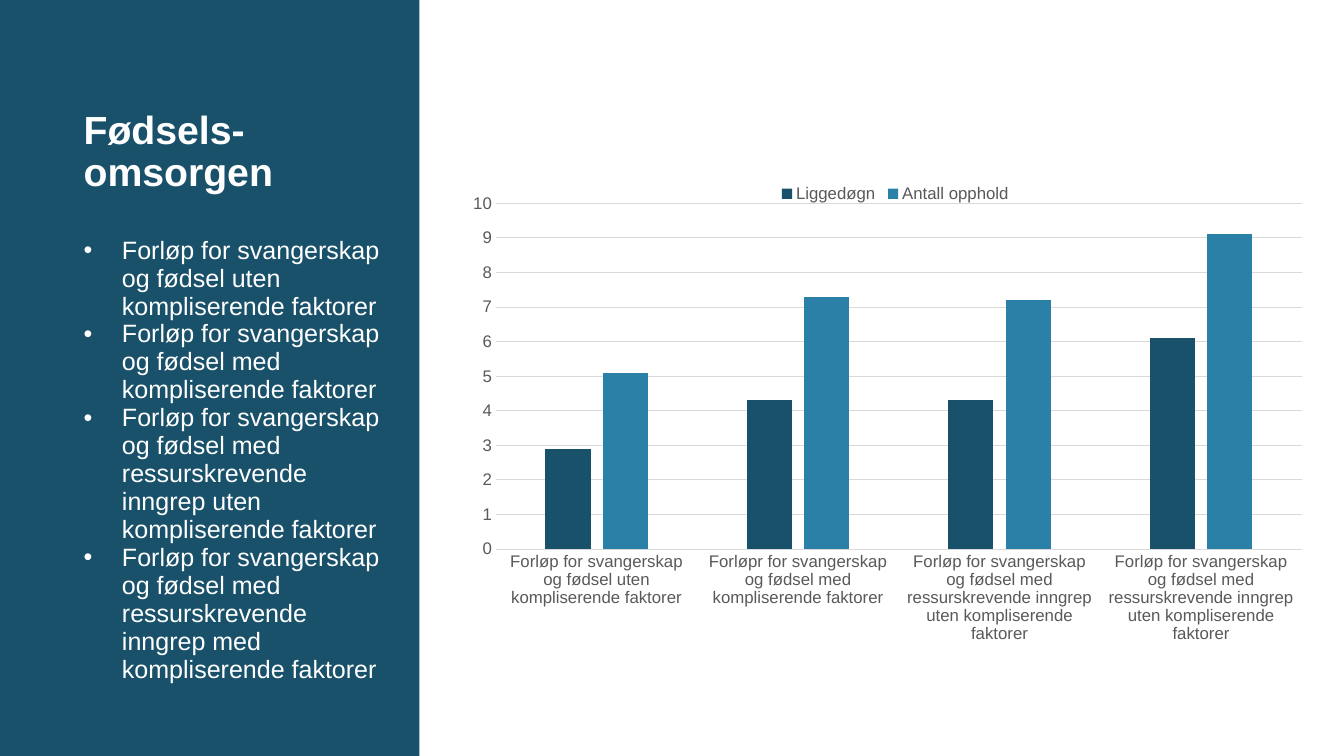
from lxml import etree
from pptx import Presentation
from pptx.chart.data import CategoryChartData
from pptx.dml.color import RGBColor
from pptx.enum import chart as ch, shapes, text
from pptx.oxml import ns
from pptx.util import Inches, Pt

TITLE = "Fødsels-omsorgen"
BULLETS = [
    "Forløp for svangerskap og fødsel uten kompliserende faktorer",
    "Forløp for svangerskap og fødsel med kompliserende faktorer",
    "Forløp for svangerskap og fødsel med ressurskrevende inngrep uten kompliserende faktorer",
    "Forløp for svangerskap og fødsel med ressurskrevende inngrep med kompliserende faktorer",
]
CATEGORIES = [
    "Forløp for svangerskap og fødsel uten kompliserende faktorer",
    "Forløpr for svangerskap og fødsel med kompliserende faktorer",
    "Forløp for svangerskap og fødsel med ressurskrevende inngrep uten kompliserende faktorer",
    "Forløp for svangerskap og fødsel med ressurskrevende inngrep uten kompliserende faktorer",
]
SERIES = [
    ("Liggedøgn", (2.9, 4.3, 4.3, 6.1), "navy"),
    ("Antall opphold", (5.1, 7.3, 7.2, 9.1), "blue"),
]
COLORS = {"navy": "19516A", "blue": "2A80A6", "white": "FFFFFF",
          "label": "595959", "grid": "D9D9D9"}
FONT = "Arial"
PLOT_LAYOUT = {"x": 0.056, "y": 0.099, "w": 0.936, "h": 0.682}
LEGEND_LAYOUT = {"x": 0.38, "y": 0.05, "w": 0.28, "h": 0.06}


def rgb(name):
    return RGBColor.from_string(COLORS[name])


def style_font(font, size, color, bold=False):
    font.name, font.size, font.bold = FONT, Pt(size), bold
    font.color.rgb = rgb(color)


def add_text(slide, box, paragraphs, size, anchor, spacing, bold=False):
    tf = slide.shapes.add_textbox(*map(Inches, box)).text_frame
    tf.word_wrap = True
    tf.vertical_anchor = anchor
    tf.margin_left = tf.margin_right = tf.margin_top = tf.margin_bottom = 0
    tf.text = "\n".join(paragraphs)
    for p in tf.paragraphs:
        p.line_spacing = spacing
        style_font(p.runs[0].font, size, "white", bold)
    return tf


def add_bullets(tf, indent):
    for p in tf.paragraphs:
        props = p._p.get_or_add_pPr()
        props.set("marL", str(Inches(indent)))
        props.set("indent", str(-Inches(indent)))
        etree.SubElement(props, ns.qn("a:buFont")).set("typeface", FONT)
        etree.SubElement(props, ns.qn("a:buChar")).set("char", "•")


def set_layout(parent, after, fractions, inner=False):
    for old in parent.findall(ns.qn("c:layout")):
        parent.remove(old)
    layout = etree.Element(ns.qn("c:layout"))
    manual = etree.SubElement(layout, ns.qn("c:manualLayout"))
    settings = [("layoutTarget", "inner")] if inner else []
    settings += [("xMode", "edge"), ("yMode", "edge"), *fractions.items()]
    for tag, value in settings:
        etree.SubElement(manual, ns.qn("c:" + tag)).set("val", str(value))
    if after is None:
        parent.insert(0, layout)
    else:
        after.addnext(layout)


def add_stay_chart(slide):
    data = CategoryChartData()
    data.categories = CATEGORIES
    for name, values, _ in SERIES:
        data.add_series(name, values)
    box = map(Inches, (4.44, 1.52, 8.54, 5.03))
    chart = slide.shapes.add_chart(ch.XL_CHART_TYPE.COLUMN_CLUSTERED, *box, data).chart
    chart.has_title = False
    chart.font.name, chart.font.size = FONT, Pt(10)

    plot = chart.plots[0]
    plot.vary_by_categories = False
    plot.gap_width, plot.overlap = 219, -27
    for series, (_, _, color) in zip(plot.series, SERIES):
        series.format.fill.solid()
        series.format.fill.fore_color.rgb = rgb(color)

    for axis in (chart.category_axis, chart.value_axis):
        axis.major_tick_mark = axis.minor_tick_mark = ch.XL_TICK_MARK.NONE
        style_font(axis.tick_labels.font, 12, "label")
    values = chart.value_axis
    values.minimum_scale, values.maximum_scale, values.major_unit = 0, 10, 1
    values.tick_labels.number_format = "0"
    values.tick_labels.number_format_is_linked = False
    values.format.line.fill.background()
    for part in (chart.category_axis, values.major_gridlines):
        part.format.line.color.rgb = rgb("grid")
        part.format.line.width = Pt(0.75)

    chart.has_legend = True
    legend = chart.legend
    legend.position = ch.XL_LEGEND_POSITION.BOTTOM
    legend.include_in_layout = False
    style_font(legend.font, 12, "label")
    area = chart._chartSpace.find(".//" + ns.qn("c:plotArea"))
    set_layout(area, None, PLOT_LAYOUT, inner=True)
    key = legend._element
    set_layout(key, key.find(ns.qn("c:legendPos")), LEGEND_LAYOUT)


def main():
    prs = Presentation()
    prs.slide_width, prs.slide_height = Inches(13.33), Inches(7.5)
    s = prs.slides.add_slide(prs.slide_layouts[6])

    panel = s.shapes.add_shape(shapes.MSO_SHAPE.RECTANGLE, 0, 0,
                               Inches(4.16), prs.slide_height)
    panel.shadow.inherit = False
    panel.fill.solid()
    panel.fill.fore_color.rgb = rgb("navy")
    panel.line.fill.background()

    add_text(s, (0.83, 1.05, 3.05, 0.93), [TITLE], 28,
             text.MSO_ANCHOR.MIDDLE, 0.9, bold=True)
    bullets = add_text(s, (0.83, 2.35, 3.05, 4.57), BULLETS, 17.9,
                       text.MSO_ANCHOR.TOP, 0.93)
    add_bullets(bullets, 0.38)
    add_stay_chart(s)
    prs.save("out.pptx")


if __name__ == "__main__":
    main()
